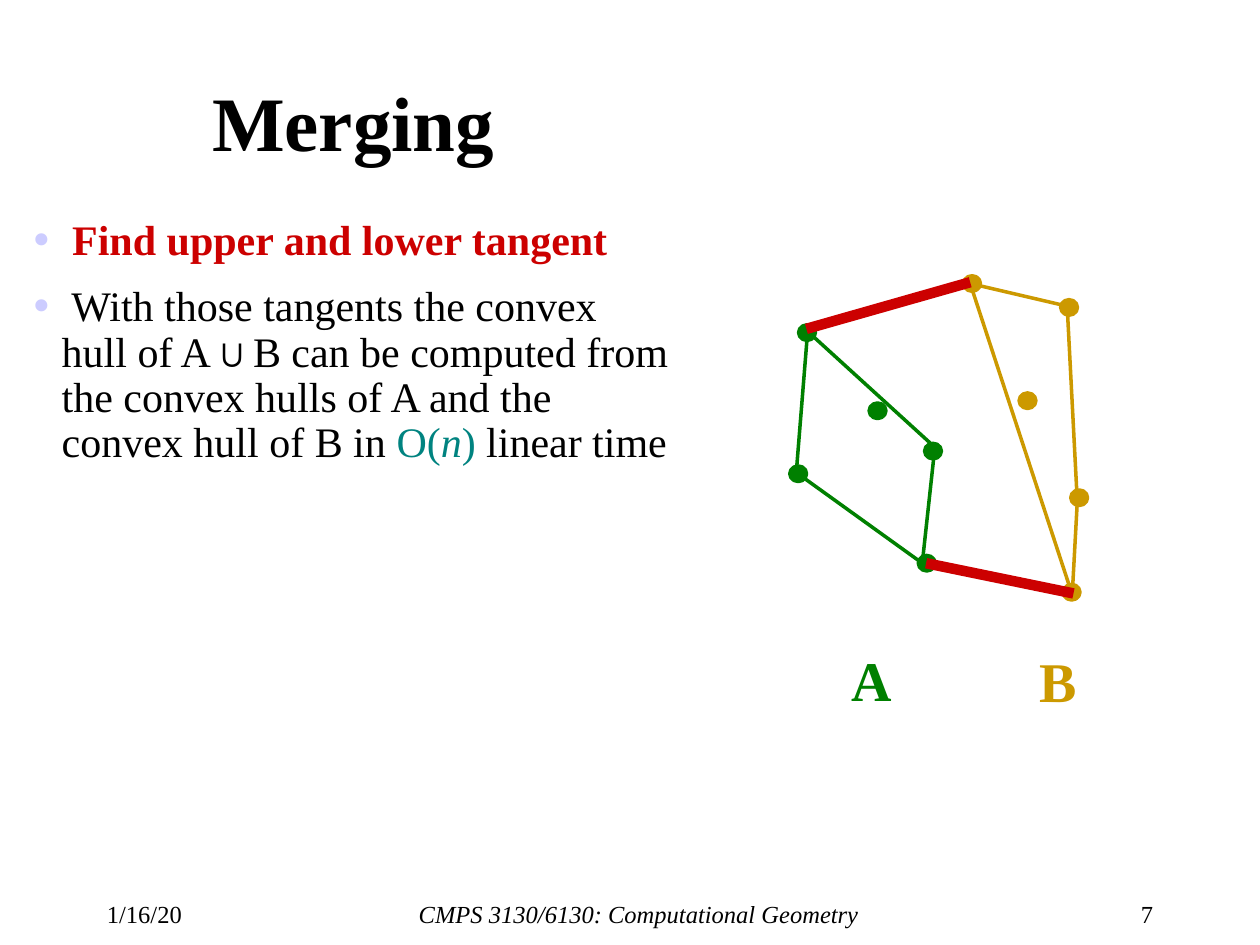
from lxml.etree import SubElement
from pptx import Presentation
from pptx.dml.color import RGBColor
from pptx.enum.shapes import MSO_CONNECTOR, MSO_SHAPE
from pptx.enum.text import MSO_ANCHOR, PP_ALIGN
from pptx.oxml.ns import qn
from pptx.util import Inches, Pt

BLACK = RGBColor(0x00, 0x00, 0x00)
RED = RGBColor(0xCC, 0x00, 0x00)
GREEN = RGBColor(0x00, 0x80, 0x00)
GOLD = RGBColor(0xCC, 0x99, 0x00)
TEAL = RGBColor(0x00, 0x83, 0x80)
LILAC = RGBColor(0xCC, 0xCC, 0xFF)

FONT = "Times New Roman"
COLS, ROWS = 100, 75  # slide grid, square cells
CELL = Inches(10) / COLS
DOT = (1.3, 1.2)

# Dots, hull corners and label corner, in cells from the diagram's corner
SETS = {
    "A": dict(color=GREEN, label=(4.6, 29.75),
              dots=[(1.4, 4.8), (0.7, 16), (10.9, 23.1), (7, 11), (11.4, 14.2)],
              hull=[(2.1, 5.3), (1.2, 16.5), (11.2, 23.7), (12.2, 14.5)]),
    "B": dict(color=GOLD, label=(19.4, 29.8),
              dots=[(14.5, 0.9), (18.9, 10.2), (22.2, 2.8), (23, 17.9), (22.4, 25.4)],
              hull=[(15, 1.5), (23.1, 26.2), (23.5, 18.8), (22.7, 3.3)]),
}
TANGENTS = [((2, 5.1), (15, 1.4)), ((11.5, 23.7), (23.2, 26.1))]


def cells(*values):
    return [round(v * CELL) for v in values]


def add_run(p, text, size, color=BLACK, **style):
    r = p.add_run()
    r.text = text
    r.font.color.rgb = color
    for name, value in dict(name=FONT, size=Pt(size), **style).items():
        setattr(r.font, name, value)


def add_text(s, box, text="", size=14, color=BLACK, align=PP_ALIGN.LEFT,
             anchor=MSO_ANCHOR.TOP, wrap=True, **style):
    tf = s.shapes.add_textbox(*cells(*box)).text_frame
    tf.word_wrap, tf.vertical_anchor = wrap, anchor
    tf.paragraphs[0].alignment = align
    if text:
        add_run(tf.paragraphs[0], text, size, color, **style)
    return tf


def add_line(s, start, end, color, width):
    c = s.shapes.add_connector(MSO_CONNECTOR.STRAIGHT, *cells(*start, *end))
    c.line.color.rgb, c.line.width = color, Pt(width)
    SubElement(c._element.spPr, qn("a:effectLst"))


def add_dot(s, corner, color):
    sp = s.shapes.add_shape(MSO_SHAPE.OVAL, *cells(*corner, *DOT))
    sp.shadow.inherit = False
    sp.fill.solid()
    sp.fill.fore_color.rgb = sp.line.color.rgb = color
    sp.line.width = Pt(2.25)


def set_bullet(p, hang):
    pPr = p._p.get_or_add_pPr()
    pPr.set("marL", str(hang))
    pPr.set("indent", str(-hang))
    SubElement(SubElement(pPr, qn("a:buClr")), qn("a:srgbClr"), val=str(LILAC))
    SubElement(pPr, qn("a:buSzPct"), val="120000")
    SubElement(pPr, qn("a:buFont"), typeface=FONT)
    SubElement(pPr, qn("a:buChar"), char="•")


def add_bullets(s, box):
    bullets = [
        [(" Find upper and lower tangent", RED, dict(bold=True))],
        [(" With those tangents the convex hull of A∪B can be computed from "
          "the convex hulls of A and the convex hull of B in ", BLACK, {}),
         ("O(", TEAL, {}), ("n", TEAL, dict(italic=True)), (")", TEAL, {}),
         (" linear time", BLACK, {})],
    ]
    tf = add_text(s, box)
    tf.margin_left, tf.margin_right = Inches(0.09), Inches(0.11)
    tf.margin_top = 0
    for i, runs in enumerate(bullets):
        p = tf.add_paragraph() if i else tf.paragraphs[0]
        p.line_spacing, p.space_before = 0.9, Pt(12)
        set_bullet(p, Inches(0.23))
        for text, color, style in runs:
            add_run(p, text, 24, color, **style)


def add_diagram(s, left, top):
    def at(point):
        return left + point[0], top + point[1]

    for part in SETS.values():
        for dot in part["dots"]:
            add_dot(s, at(dot), part["color"])
    for name, part in SETS.items():
        hull = part["hull"]
        for start, end in zip(hull, hull[1:] + hull[:1]):
            add_line(s, at(start), at(end), part["color"], 2)
        add_text(s, (*at(part["label"]), 5.1, 6.3), name, 32, part["color"],
                 PP_ALIGN.CENTER, wrap=False, bold=True)
    for start, end in TANGENTS:
        add_line(s, at(start), at(end), RED, 6)


def add_footer(s, top, height):
    add_text(s, (7.5, top, 9.5, height), "1/16/20")
    add_text(s, (19, top, 63.4, height), "CMPS 3130/6130: Computational Geometry",
             align=PP_ALIGN.CENTER, italic=True)
    add_text(s, (84.3, top, 8.2, height), "7", align=PP_ALIGN.RIGHT)


def main():
    prs = Presentation()
    prs.slide_width, prs.slide_height = cells(COLS, ROWS)
    s = prs.slides.add_slide(prs.slide_layouts[6])
    add_footer(s, 70.85, 2.5)
    add_text(s, (15.85, 3.3, 82.5, 12.5), "Merging", 44,
             anchor=MSO_ANCHOR.MIDDLE, bold=True)
    add_bullets(s, (1.7, 17.4, 52.6, 49.1))
    add_diagram(s, 62, 21)
    prs.save("out.pptx")


if __name__ == "__main__":
    main()
